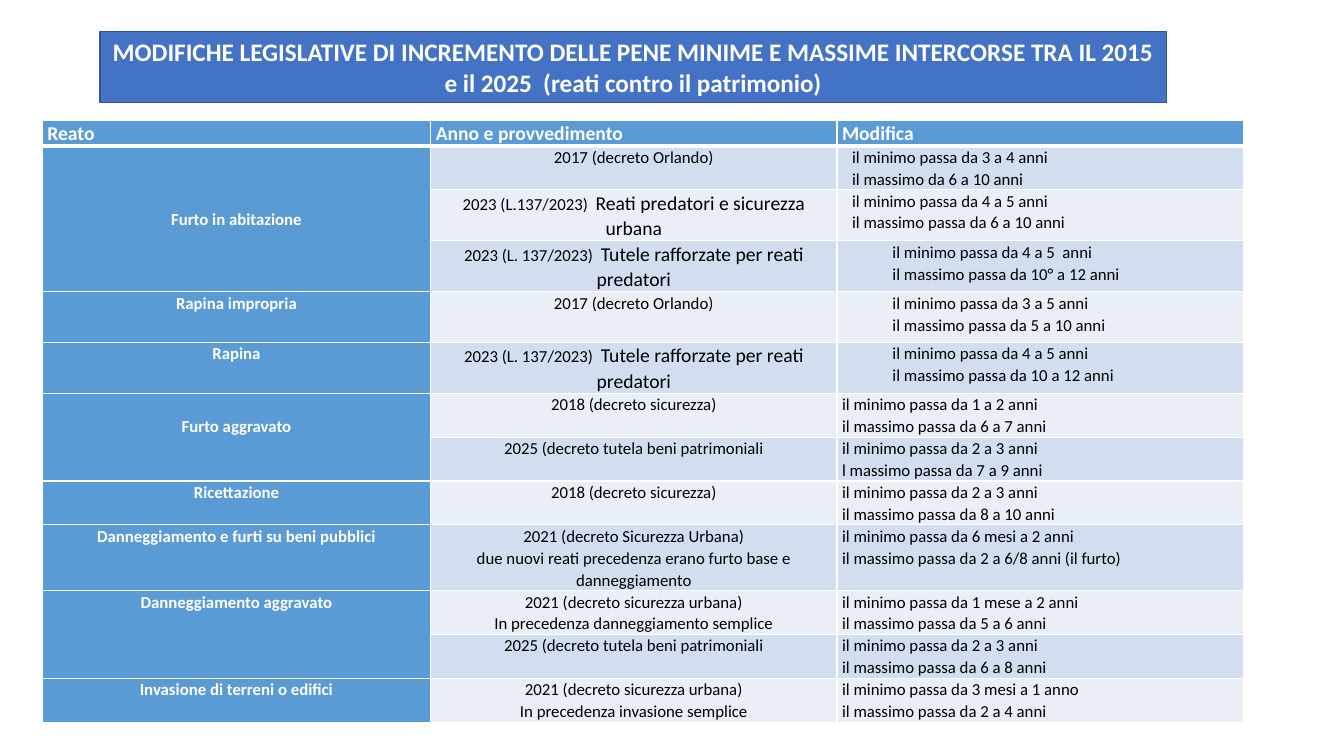
"""Slide on theft and damage law: changes in penalties, 2015 to 2025."""
from lxml.etree import SubElement as Sub
from pptx import Presentation
from pptx.dml.color import RGBColor as Rgb
from pptx.enum.shapes import MSO_SHAPE as Kind
from pptx.enum.text import MSO_ANCHOR as Anchor, PP_ALIGN as Align
from pptx.oxml.ns import qn
from pptx.util import Pt

HUES = {
    "white": "FFFFFF", "black": "000000", "title": "4472C4", "edge": "325491",
    "head": "5B9BD5", "dark": "D2DEEF", "light": "EAEFF7",
}
TITLE = ("MODIFICHE LEGISLATIVE DI INCREMENTO DELLE PENE MINIME E MASSIME "
         "INTERCORSE TRA IL 2015 e il 2025  (reati contro il patrimonio)")
HEADS = ["Reato", "Anno e provvedimento", "Modifica"]
COLS = [277.5, 290.2, 290.2]
TOP = 18.5
SAFE = [("2023 (L. 137/2023)  ", 12), ("Tutele rafforzate per reati predatori", 14)]
URBAN = [("2023 (L.137/2023)  ", 12), ("Reati predatori e sicurezza urbana", 14)]
GOODS = "2025 (decreto tutela beni patrimoniali"
CITY = "2021 (decreto sicurezza urbana)"

# Height, crime (None continues the one above), laws, changes, indent
ROWS = [
    (29.6, "Furto in abitazione", ["2017 (decreto Orlando)"],
     ["il minimo passa da 3 a 4 anni", "il massimo da 6 a 10 anni"], 7.2),
    (36, None, [URBAN],
     ["il minimo passa da 4 a 5 anni", "il massimo passa da 6 a 10 anni"], 7.2),
    (36, None, [SAFE],
     ["il minimo passa da 4 a 5  anni", "il massimo passa da 10° a 12 anni"], 36),
    (36, "Rapina impropria", ["2017 (decreto Orlando)"],
     ["il minimo passa da 3 a 5 anni", "il massimo passa da 5 a 10 anni"], 36),
    (36, "Rapina", [SAFE],
     ["il minimo passa da 4 a 5 anni", "il massimo passa da 10 a 12 anni"], 36),
    (30.8, "Furto aggravato", ["2018 (decreto sicurezza)"],
     ["il minimo passa da 1 a 2 anni", "il massimo passa da 6 a 7 anni"], 0),
    (30.8, None, [GOODS],
     ["il minimo passa da 2 a 3 anni", "l massimo passa da 7 a 9 anni"], 0),
    (30.8, "Ricettazione", ["2018 (decreto sicurezza)"],
     ["il minimo passa da 2 a 3 anni", "il massimo passa da 8 a 10 anni"], 0),
    (46.3, "Danneggiamento e furti su beni pubblici",
     ["2021 (decreto Sicurezza Urbana)",
      "due nuovi reati precedenza erano furto base e danneggiamento"],
     ["il minimo passa da 6 mesi a 2 anni",
      "il massimo passa da 2 a 6/8 anni (il furto)"], 0),
    (30.8, "Danneggiamento aggravato",
     [CITY, "In precedenza danneggiamento semplice"],
     ["il minimo passa da 1 mese a 2 anni", "il massimo passa da 5 a 6 anni"], 0),
    (30.8, None, [GOODS],
     ["il minimo passa da 2 a 3 anni", "il massimo passa da 6 a 8 anni"], 0),
    (30.8, "Invasione di terreni o edifici",
     [CITY, "In precedenza invasione semplice"],
     ["il minimo passa da 3 mesi a 1 anno", "il massimo passa da 2 a 4 anni"], 0),
]


def hue(name):
    """Return the colour with this name."""
    return Rgb.from_string(HUES[name])


def write(frame, paras, size=12, ink="black", bold=False, align=Align.LEFT, gap=1.07):
    """Write paragraphs, each a string or a list of (text, size) runs."""
    for i, runs in enumerate(paras):
        para = frame.add_paragraph() if i else frame.paragraphs[0]
        para.alignment = align
        para.line_spacing = gap
        for text, pts in [(runs, size)] if isinstance(runs, str) else runs:
            run = para.add_run()
            run.text = text
            font = run.font
            font.name, font.size, font.bold = "Calibri", Pt(pts), bold
            font.color.rgb = hue(ink)


def style(cell, fill, base=1):
    """Set the white borders, fill and margins of a cell."""
    props = cell._tc.get_or_add_tcPr()
    for tag, wide in (("lnL", 1), ("lnR", 1), ("lnT", 1), ("lnB", base)):
        line = Sub(props, qn(f"a:{tag}"), w=str(Pt(wide)))
        Sub(Sub(line, qn("a:solidFill")), qn("a:srgbClr"), val=HUES["white"])
    cell.fill.solid()
    cell.fill.fore_color.rgb = hue(fill)
    cell.margin_left = cell.margin_right = Pt(3.6)
    cell.margin_top = cell.margin_bottom = 0


def banner(slide):
    """Draw the title box."""
    box = slide.shapes.add_shape(Kind.RECTANGLE, Pt(71.3), Pt(22.3), Pt(761.8), Pt(51.1))
    box.shadow.inherit = False
    box.fill.solid()
    box.fill.fore_color.rgb = hue("title")
    box.line.color.rgb = hue("edge")
    box.line.width = Pt(1)
    frame = box.text_frame
    frame.word_wrap = True
    frame.vertical_anchor = Anchor.MIDDLE
    write(frame, [TITLE], size=18, ink="white", bold=True, align=Align.CENTER, gap=1)


def fill_row(grid, y, row):
    """Fill one body row of the table."""
    high, crime, laws, moves, dent = row
    grid.rows[y].height = Pt(high)
    shade = "dark" if y % 2 else "light"
    left, mid, right = (grid.cell(y, x) for x in range(3))
    for cell, fill in ((left, "head"), (mid, shade), (right, shade)):
        style(cell, fill)
    if crime:
        write(left.text_frame, [crime], ink="white", bold=True, align=Align.CENTER)
    write(mid.text_frame, laws, align=Align.CENTER)
    right.margin_left = Pt(3.6 + dent)
    write(right.text_frame, moves)


def join(grid):
    """Merge each crime cell with the blank ones below it."""
    marks = [y for y, row in enumerate(ROWS, 1) if row[1]] + [len(ROWS) + 1]
    for y, stop in zip(marks, marks[1:]):
        if stop - y > 1:
            grid.cell(y, 0).merge(grid.cell(stop - 1, 0))


def chart_law(slide):
    """Draw the table of crimes, laws and changes."""
    high = TOP + sum(row[0] for row in ROWS)
    grid = slide.shapes.add_table(len(ROWS) + 1, len(COLS), Pt(30.2), Pt(85.7),
                                  Pt(sum(COLS)), Pt(high)).table
    grid.rows[0].height = Pt(TOP)
    for x, (wide, head) in enumerate(zip(COLS, HEADS)):
        grid.columns[x].width = Pt(wide)
        style(grid.cell(0, x), "head", base=3)
        write(grid.cell(0, x).text_frame, [head], size=14, ink="white", bold=True)
    for y, row in enumerate(ROWS, 1):
        fill_row(grid, y, row)
    join(grid)
    grid.cell(1, 0).vertical_anchor = Anchor.MIDDLE
    grid.cell(6, 0).margin_top = Pt(15.6)


def main():
    """Build and save the slide."""
    deck = Presentation()
    deck.slide_width, deck.slide_height = Pt(960), Pt(540)
    slide = deck.slides.add_slide(deck.slide_layouts[6])
    banner(slide)
    chart_law(slide)
    deck.save("out.pptx")


if __name__ == "__main__":
    main()
